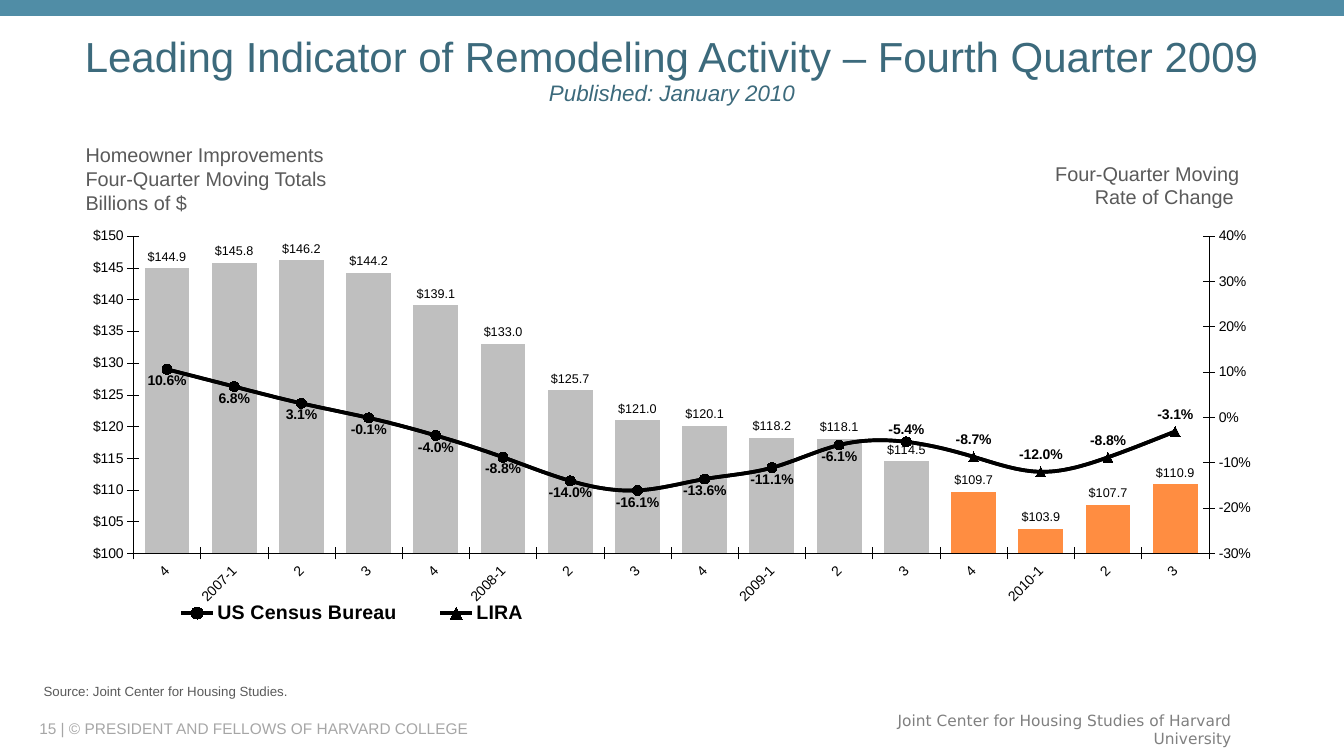
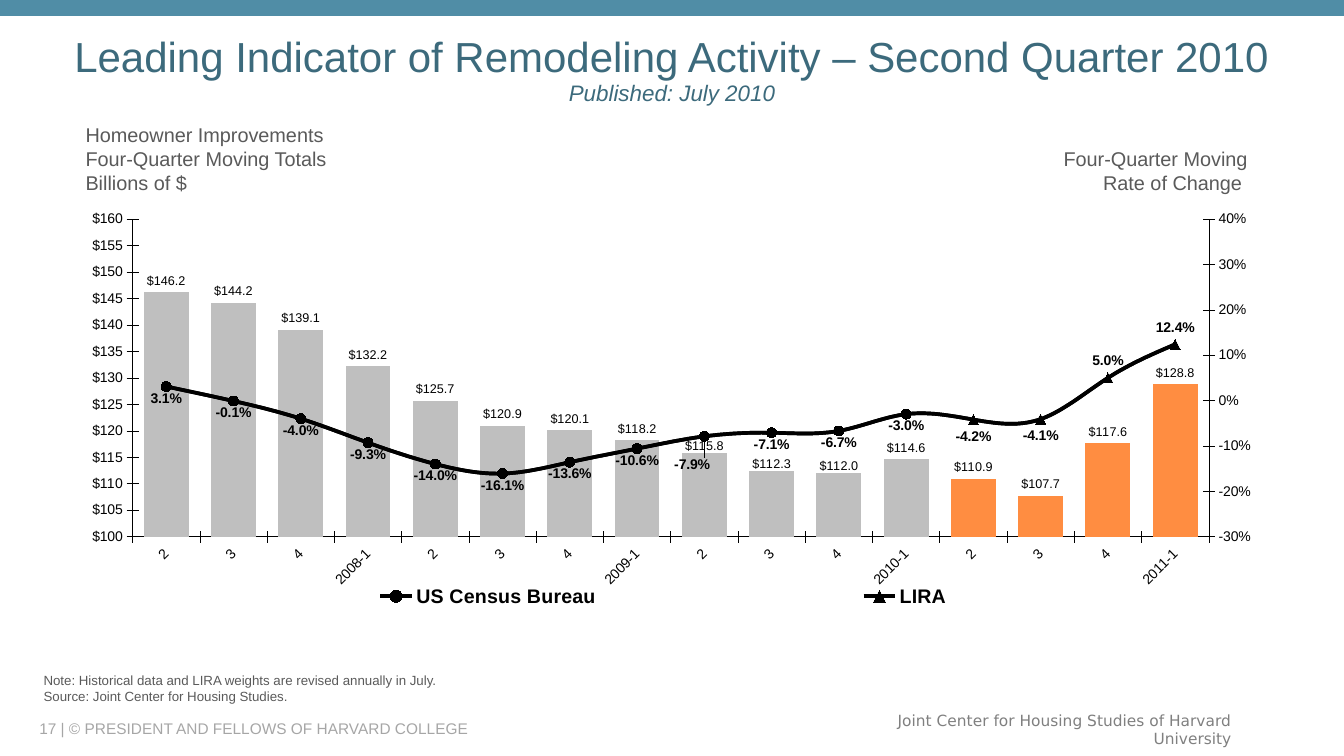
from copy import deepcopy

from pptx import Presentation
from pptx.chart.axis import ValueAxis
from pptx.chart.data import CategoryChartData
from pptx.dml.color import RGBColor
from pptx.enum.chart import (XL_CHART_TYPE, XL_LABEL_POSITION, XL_LEGEND_POSITION,
                             XL_MARKER_STYLE, XL_TICK_MARK)
from pptx.enum.shapes import MSO_SHAPE
from pptx.enum.text import MSO_ANCHOR, MSO_AUTO_SIZE, PP_ALIGN
from pptx.oxml import parse_xml
from pptx.oxml.ns import nsdecls, qn
from pptx.util import Inches, Pt

COLUMNS = XL_CHART_TYPE.COLUMN_CLUSTERED
ABOVE, BELOW = XL_LABEL_POSITION.ABOVE, XL_LABEL_POSITION.BELOW
OUTSIDE = XL_LABEL_POSITION.OUTSIDE_END
BOTTOM = XL_LEGEND_POSITION.BOTTOM
CIRCLE, TRIANGLE = XL_MARKER_STYLE.CIRCLE, XL_MARKER_STYLE.TRIANGLE
NO_MARKER = XL_MARKER_STYLE.NONE
CROSS = XL_TICK_MARK.CROSS
RECT = MSO_SHAPE.RECTANGLE
MIDDLE, TOP = MSO_ANCHOR.MIDDLE, MSO_ANCHOR.TOP
LEFT, CENTER, RIGHT = PP_ALIGN.LEFT, PP_ALIGN.CENTER, PP_ALIGN.RIGHT
NO_FIT = MSO_AUTO_SIZE.NONE

# Shared style
TEAL, TITLE_INK, INK, BLACK = "508DA6", "3C6A7C", "5A5A5A", "000000"
FOOT_LEFT, FOOT_RIGHT = "A6A6A6", "808080"
BAR, FORECAST = "BFBFBF", "FF8D41"
FONT, FOOT_FONT = "Arial", "DejaVu Sans"
FIRST_FORECAST = 12  # earlier quarters are observed values

# Grid of 160 columns by 90 rows
CELL = Inches(1) / 12
TITLE_BOX = (6.7, 4, 146.6, 9)
BAND_BOX = (0, 0, 160, 1.9)
PAGE_BOX = (3.5, 85.5, 95, 2.5)
CENTER_BOX = (101, 85.1, 46.8, 3.5)

LEFT_CAPTION = ["Homeowner Improvements", "Four-Quarter Moving Totals", "Billions of $"]
RIGHT_CAPTION = ["Four-Quarter Moving", "Rate of Change "]
SOURCE = "Source: Joint Center for Housing Studies."

SLIDES = [
    dict(page=15, title="Leading Indicator of Remodeling Activity – Fourth Quarter 2009",
         published="Published: January 2010", notes=[SOURCE],
         left_box=(9, 16.4, 46, 9.8), right_box=(100, 18.6, 48.7, 7),
         chart_box=(7, 25, 145.5, 50), note_box=(4, 80.8, 120.8, 3.1),
         quarters="4 2007-1 2 3 4 2008-1 2 3 4 2009-1 2 3 4 2010-1 2 3".split(),
         totals=[144.9, 145.8, 146.2, 144.2, 139.1, 133, 125.7, 121,
                 120.1, 118.2, 118.1, 114.5, 109.7, 103.9, 107.7, 110.9],
         rates=[10.6, 6.8, 3.1, -0.1, -4, -8.8, -14, -16.1,
                -13.6, -11.1, -6.1, -5.4, -8.7, -12, -8.8, -3.1],
         top=150, legend=(0.07, 0.92, 0.34, 0.08), raised=range(11, 16),
         total_shifts={}, rate_shifts={}),
    dict(page=17, title="Leading Indicator of Remodeling Activity – Second Quarter 2010",
         published="Published: July 2010",
         notes=["Note: Historical data and LIRA weights are revised annually in July.", SOURCE],
         left_box=(9, 14, 46, 9.8), right_box=(101, 16.9, 48.7, 7),
         chart_box=(6.9, 23, 145.6, 50), note_box=(4, 79.4, 120.8, 5),
         quarters="2 3 4 2008-1 2 3 4 2009-1 2 3 4 2010-1 2 3 4 2011-1".split(),
         totals=[146.2, 144.2, 139.1, 132.2, 125.7, 120.9, 120.1, 118.2,
                 115.8, 112.3, 112, 114.6, 110.9, 107.7, 117.6, 128.8],
         rates=[3.1, -0.1, -4, -9.3, -14, -16.1, -13.6, -10.6,
                -7.9, -7.1, -6.7, -3, -4.2, -4.1, 5, 12.4],
         top=160, legend=(0.05, 0.92, 0.89, 0.08), raised=(14, 15),
         total_shifts={8: (0, 0.01), 9: (0, 0.01), 10: (0, 0.01)},
         rate_shifts={8: (-0.01, 0.04)}),
]


def rgb(color):
    return RGBColor.from_string(color)


def place(box):
    return [round(v * CELL) for v in box]


def style(font, size, color=BLACK, name=FONT, bold=False, italic=False):
    font.size, font.name, font.bold, font.italic = Pt(size), name, bold, italic
    font.color.rgb = rgb(color)


def add_text(slide, box, lines, size, color, align=LEFT, anchor=TOP, name=FONT):
    tf = slide.shapes.add_textbox(*place(box)).text_frame
    tf.word_wrap = True
    tf.vertical_anchor = anchor
    tf.text = "\n".join(lines)
    for p in tf.paragraphs:
        p.alignment = align
        for r in p.runs:
            style(r.font, size, color, name)


# Band and footers
def add_frame(slide, page):
    band = slide.shapes.add_shape(RECT, *place(BAND_BOX))
    band.shadow.inherit = False
    band.fill.solid()
    band.fill.fore_color.rgb = rgb(TEAL)
    band.line.fill.background()
    add_text(slide, PAGE_BOX, [f"{page} | © PRESIDENT AND FELLOWS OF HARVARD COLLEGE"],
             11, FOOT_LEFT, anchor=MIDDLE)
    add_text(slide, CENTER_BOX, ["Joint Center for Housing Studies of Harvard University"],
             11, FOOT_RIGHT, RIGHT, MIDDLE, FOOT_FONT)


# Title with the publication date on its second line
def add_title(slide, title, published):
    sp = slide.shapes.title
    sp.left, sp.top, sp.width, sp.height = place(TITLE_BOX)
    tf = sp.text_frame
    tf.text = f"{title}\v{published}"
    tf.auto_size, tf.word_wrap, tf.vertical_anchor = NO_FIT, True, MIDDLE
    p = tf.paragraphs[0]
    p.alignment, p.line_spacing = CENTER, 0.9
    heading, date = p.runs
    style(heading.font, 30, TITLE_INK)
    style(date.font, 16, TITLE_INK, italic=True)
    p._p.find(qn("a:br")).insert(0, deepcopy(heading._r.rPr))


def manual_layout(x, y, w=None, h=None, inner=False, edge=True):
    parts = '<c:layoutTarget val="inner"/>' if inner else ""
    if edge:
        parts += '<c:xMode val="edge"/><c:yMode val="edge"/>'
    for tag, value in zip("xywh", (x, y, w, h)):
        if value is not None:
            parts += f'<c:{tag} val="{value}"/>'
    return parse_xml(f'<c:layout {nsdecls("c")}><c:manualLayout>{parts}'
                     '</c:manualLayout></c:layout>')


def drop_layout(el):
    for old in el.findall(qn("c:layout")):
        el.remove(old)


def format_axis(axis):
    axis.has_major_gridlines = False
    axis.major_tick_mark, axis.minor_tick_mark = CROSS, XL_TICK_MARK.NONE
    axis.format.line.color.rgb = rgb(BLACK)
    axis.format.line.width = Pt(0.33)
    style(axis.tick_labels.font, 10)


def scale_axis(axis, low, high, step, fmt):
    axis.minimum_scale, axis.maximum_scale, axis.major_unit = low, high, step
    axis.tick_labels.number_format = fmt
    axis.tick_labels.number_format_is_linked = False


# Moves the rate series to a line plot on a right-hand axis
def split_rates(chart):
    bars = chart.plots[0]._element
    lines = parse_xml(f'<c:lineChart {nsdecls("c")}><c:grouping val="standard"/>'
                      '<c:varyColors val="0"/><c:marker val="1"/>'
                      '<c:axId val="5001"/><c:axId val="5002"/></c:lineChart>')
    for ser in bars.findall(qn("c:ser"))[1:]:
        for flag in ser.findall(qn("c:invertIfNegative")):
            ser.remove(flag)
        lines.find(qn("c:marker")).addprevious(ser)
    bars.addnext(lines)

    last = chart.value_axis._element
    cat, val = deepcopy(chart.category_axis._element), deepcopy(last)
    for el, own, other in ((cat, "5001", "5002"), (val, "5002", "5001")):
        el.find(qn("c:axId")).set("val", own)
        el.find(qn("c:crossAx")).set("val", other)
    cat.find(qn("c:delete")).set("val", "1")
    val.find(qn("c:axPos")).set("val", "r")
    val.find(qn("c:crosses")).set("val", "max")
    last.addnext(val)
    val.addnext(cat)
    scale_axis(ValueAxis(val), -0.3, 0.4, 0.1, "0%")


def label_series(series, fmt, size, position, bold=False, raised=(), shifts=None):
    shifts = shifts or {}
    labels = series.data_labels
    labels.show_value, labels.position = True, position
    labels.number_format, labels.number_format_is_linked = fmt, False
    style(labels.font, size, bold=bold)
    for i in sorted({*raised, *shifts}):
        label = series.points[i].data_label
        style(label.font, size, bold=bold)
        label.position = ABOVE if i in raised else position
        if i in shifts:
            dLbl = next(d for d in series._element.iter(qn("c:dLbl"))
                        if d.find(qn("c:idx")).get("val") == str(i))
            drop_layout(dLbl)
            dLbl.insert(1, manual_layout(*shifts[i], edge=False))


def format_rate(series, marker, unmarked):
    series.smooth = True
    series.format.line.color.rgb = rgb(BLACK)
    series.format.line.width = Pt(2.64)
    series.marker.style, series.marker.size = marker, 7
    series.marker.format.fill.solid()
    series.marker.format.fill.fore_color.rgb = rgb(BLACK)
    series.marker.format.line.color.rgb = rgb(BLACK)
    for i in unmarked:
        series.points[i].marker.style = NO_MARKER


def add_legend(chart, box):
    chart.has_legend = True
    legend = chart.legend
    legend.position, legend.include_in_layout = BOTTOM, False
    style(legend.font, 14, bold=True)
    el = legend._element
    drop_layout(el)
    pos = el.find(qn("c:legendPos"))
    pos.addnext(manual_layout(*box))
    pos.addnext(parse_xml(f'<c:legendEntry {nsdecls("c")}><c:idx val="0"/>'
                          '<c:delete val="1"/></c:legendEntry>'))


# Totals as columns, rates of change as lines
def add_indicator_chart(slide, box, info):
    data = CategoryChartData()
    data.categories = info["quarters"]
    data.add_series("Series 1", info["totals"], r"\$#,##0.0")
    rates = [round(v / 100, 3) for v in info["rates"]]
    for name in ("US Census Bureau", "LIRA"):
        data.add_series(name, rates, "0.0%")
    chart = slide.shapes.add_chart(COLUMNS, *place(box), data).chart
    chart.has_title = False
    style(chart.font, 13.2)

    format_axis(chart.category_axis)
    chart.category_axis._element.find(qn("c:txPr")).find(qn("a:bodyPr")).set("rot", "-2700000")
    format_axis(chart.value_axis)
    scale_axis(chart.value_axis, 100, info["top"], 5, r"\$#,##0")
    split_rates(chart)

    columns, lines = chart.plots
    columns.gap_width, columns.vary_by_categories = 50, False
    totals = columns.series[0]
    count = len(rates)
    totals.format.fill.solid()
    totals.format.fill.fore_color.rgb = rgb(BAR)
    for i in range(FIRST_FORECAST, count):
        fill = totals.points[i].format.fill
        fill.solid()
        fill.fore_color.rgb = rgb(FORECAST)
    label_series(totals, r"\$#,##0.0", 9, OUTSIDE, shifts=info["total_shifts"])

    census, lira = lines.series
    format_rate(census, CIRCLE, range(FIRST_FORECAST, count))
    format_rate(lira, TRIANGLE, range(FIRST_FORECAST))
    label_series(lira, "0.0%", 10, BELOW, True, info["raised"], info["rate_shifts"])

    add_legend(chart, info["legend"])
    plot_area = columns._element.getparent()
    drop_layout(plot_area)
    plot_area.insert(0, manual_layout(0.061, 0.062, 0.88, 0.756, inner=True))


def add_indicator_slide(prs, info):
    slide = prs.slides.add_slide(prs.slide_layouts[5])
    add_frame(slide, info["page"])
    add_title(slide, info["title"], info["published"])
    add_text(slide, info["left_box"], LEFT_CAPTION, 14.2, INK)
    add_text(slide, info["right_box"], RIGHT_CAPTION, 14.2, INK, RIGHT)
    add_indicator_chart(slide, info["chart_box"], info)
    add_text(slide, info["note_box"], info["notes"], 9.5, INK)


def main():
    prs = Presentation()
    prs.slide_width, prs.slide_height = place((160, 90))
    for info in SLIDES:
        add_indicator_slide(prs, info)
    prs.save("out.pptx")


if __name__ == "__main__":
    main()
